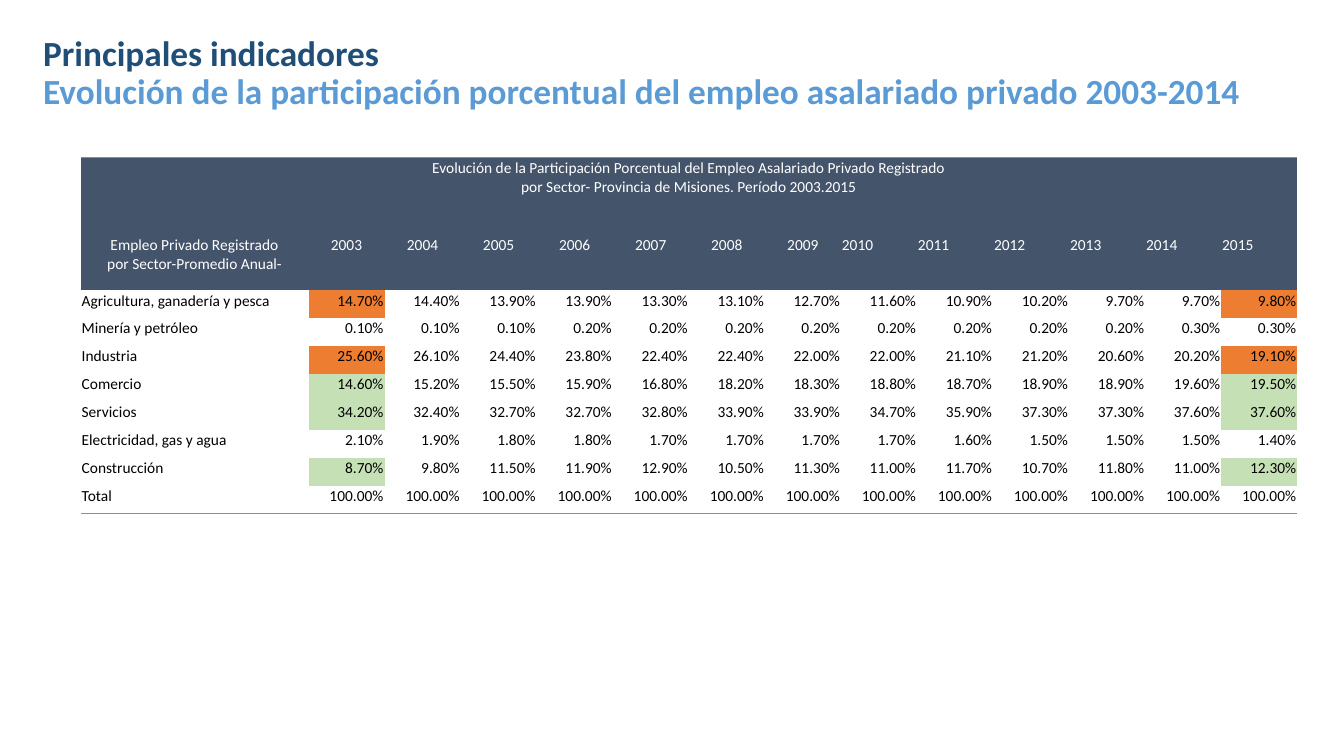
import copy

import lxml.etree
import pptx
import pptx.dml.color
import pptx.enum.text
import pptx.oxml.ns
import pptx.util

Inches = pptx.util.Inches
Pt = pptx.util.Pt
qn = pptx.oxml.ns.qn
ALIGN = pptx.enum.text.PP_ALIGN
ANCHOR = pptx.enum.text.MSO_ANCHOR

NAVY, BLUE, SLATE = "1F4E79", "5B9BD5", "44546A"
WHITE, BLACK = "FFFFFF", "000000"
ORANGE, GREEN = "ED7D31", "C5E0B4"
PLAIN_STYLE = "{2D5ABB26-0587-4C30-8999-92F81FD0307C}"

TABLE_TITLE = ("Evolución de la Participación Porcentual del Empleo Asalariado Privado Registrado"
               "\vpor Sector- Provincia de Misiones. Período 2003.2015")
SECTOR_HEADING = "Empleo Privado Registrado\vpor Sector-Promedio Anual-"
YEARS = range(2003, 2016)
# Sector, share per year, highlight of the first and last year
SECTORS = [
    ("Agricultura, ganadería y pesca",
     [14.7, 14.4, 13.9, 13.9, 13.3, 13.1, 12.7, 11.6, 10.9, 10.2, 9.7, 9.7, 9.8], ORANGE),
    ("Minería y petróleo",
     [0.1, 0.1, 0.1, 0.2, 0.2, 0.2, 0.2, 0.2, 0.2, 0.2, 0.2, 0.3, 0.3], None),
    ("Industria",
     [25.6, 26.1, 24.4, 23.8, 22.4, 22.4, 22, 22, 21.1, 21.2, 20.6, 20.2, 19.1], ORANGE),
    ("Comercio",
     [14.6, 15.2, 15.5, 15.9, 16.8, 18.2, 18.3, 18.8, 18.7, 18.9, 18.9, 19.6, 19.5], GREEN),
    ("Servicios",
     [34.2, 32.4, 32.7, 32.7, 32.8, 33.9, 33.9, 34.7, 35.9, 37.3, 37.3, 37.6, 37.6], GREEN),
    ("Electricidad, gas y agua",
     [2.1, 1.9, 1.8, 1.8, 1.7, 1.7, 1.7, 1.7, 1.6, 1.5, 1.5, 1.5, 1.4], None),
    ("Construcción",
     [8.7, 9.8, 11.5, 11.9, 12.9, 10.5, 11.3, 11, 11.7, 10.7, 11.8, 11, 12.3], GREEN),
    ("Total", [100] * len(YEARS), None),
]


def rgb(color):
    return pptx.dml.color.RGBColor.from_string(color)


def apply_format(target, values):
    for name, value in values.items():
        setattr(target, name, value)


def style_run(run, size, color, bold=False):
    apply_format(run.font, {"name": "Calibri", "size": Pt(size), "bold": bold})
    run.font.color.rgb = rgb(color)


def size_breaks(paragraph):
    """Give line breaks the format of the paragraph's first run."""
    for line_break in paragraph._p.findall(qn("a:br")):
        line_break.append(copy.deepcopy(paragraph.runs[0]._r.rPr))


def add_border(cell, side):
    border = lxml.etree.Element(qn(f"a:ln{side}"), w=str(Pt(1)))
    solid = lxml.etree.SubElement(border, qn("a:solidFill"))
    lxml.etree.SubElement(solid, qn("a:srgbClr"), val=BLUE)
    cell._tc.get_or_add_tcPr().insert(0, border)


def fill_cell(cell, text, align, color=BLACK, fill=None):
    apply_format(cell, {"margin_left": Inches(0.01), "margin_right": Inches(0.01),
                        "margin_top": Inches(0.01), "margin_bottom": 0})
    cell.text = text
    paragraph = cell.text_frame.paragraphs[0]
    paragraph.alignment = align
    for run in paragraph.runs:
        style_run(run, 11, color)
    size_breaks(paragraph)
    if fill:
        cell.fill.solid()
        cell.fill.fore_color.rgb = rgb(fill)
    else:
        cell.fill.background()


def add_heading(slide, left, top, width, height):
    frame = slide.shapes.add_textbox(
        Inches(left), Inches(top), Inches(width), Inches(height)).text_frame
    apply_format(frame, {"word_wrap": True, "vertical_anchor": ANCHOR.BOTTOM})
    paragraph = frame.paragraphs[0]
    paragraph.line_spacing = 0.9
    topic = paragraph.add_run()
    topic.text = "Principales indicadores"
    style_run(topic, 25.2, NAVY, True)
    paragraph.add_line_break()
    subject = paragraph.add_run()
    subject.text = "Evolución de la participación porcentual del empleo asalariado privado 2003-2014"
    style_run(subject, 25.2, BLUE, True)
    size_breaks(paragraph)


def add_employment_table(slide, left, top, width, height):
    title_height, years_height, sector_width = 0.77, 0.55, 2.26
    frame = slide.shapes.add_table(
        len(SECTORS) + 2, len(YEARS) + 1,
        Inches(left), Inches(top), Inches(width), Inches(height))
    table = frame.table
    apply_format(table, {"first_row": False, "horz_banding": False})
    table._tbl.tblPr.find(qn("a:tableStyleId")).text = PLAIN_STYLE

    # Column widths and row heights
    year_width = (width - sector_width) / len(YEARS)
    for index, column in enumerate(table.columns):
        column.width = Inches(year_width if index else sector_width)
    sector_height = (height - title_height - years_height) / len(SECTORS)
    heights = [title_height, years_height] + [sector_height] * len(SECTORS)
    for row, row_height in zip(table.rows, heights):
        row.height = Inches(row_height)

    # Title row and year row
    table.cell(0, 0).merge(table.cell(0, len(YEARS)))
    fill_cell(table.cell(0, 0), TABLE_TITLE, ALIGN.CENTER, WHITE, SLATE)
    fill_cell(table.cell(1, 0), SECTOR_HEADING, ALIGN.CENTER, WHITE, SLATE)
    for column, year in enumerate(YEARS, 1):
        align = ALIGN.CENTER if year < 2010 else ALIGN.LEFT
        fill_cell(table.cell(1, column), str(year), align, WHITE, SLATE)

    # Sector rows
    for row, (sector, shares, highlight) in enumerate(SECTORS, 2):
        fill_cell(table.cell(row, 0), sector, ALIGN.LEFT)
        for column, share in enumerate(shares, 1):
            fill = highlight if column in (1, len(YEARS)) else None
            fill_cell(table.cell(row, column), f"{share:.2f}%", ALIGN.RIGHT, fill=fill)

    # Rules above and below the table
    for column in range(len(YEARS) + 1):
        add_border(table.cell(0, column), "T")
        add_border(table.cell(len(SECTORS) + 1, column), "B")


def main():
    deck = pptx.Presentation()
    apply_format(deck, {"slide_width": Inches(13.33), "slide_height": Inches(7.5)})
    slide = deck.slides.add_slide(deck.slide_layouts[6])
    add_employment_table(slide, 0.8, 1.56, 12.07, 3.54)
    add_heading(slide, 0.33, 0.29, 12.38, 0.87)
    deck.save("out.pptx")


if __name__ == "__main__":
    main()
